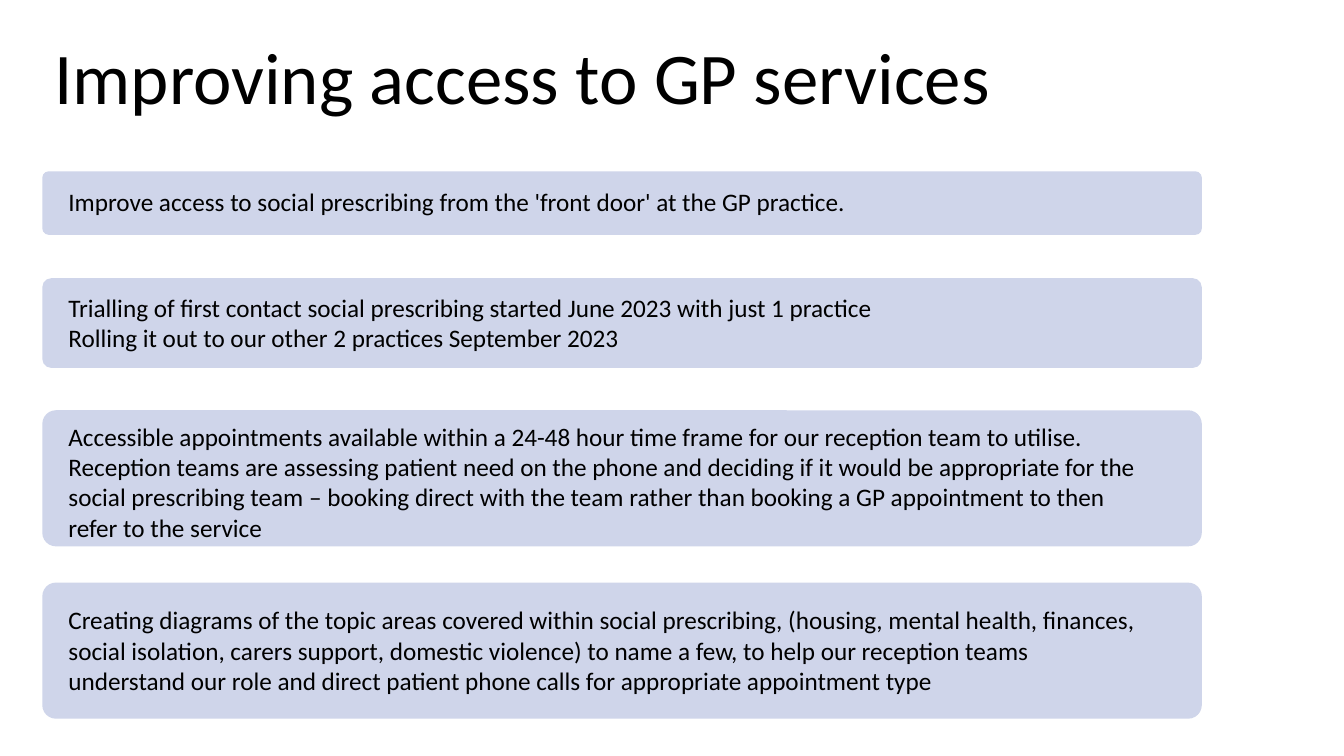
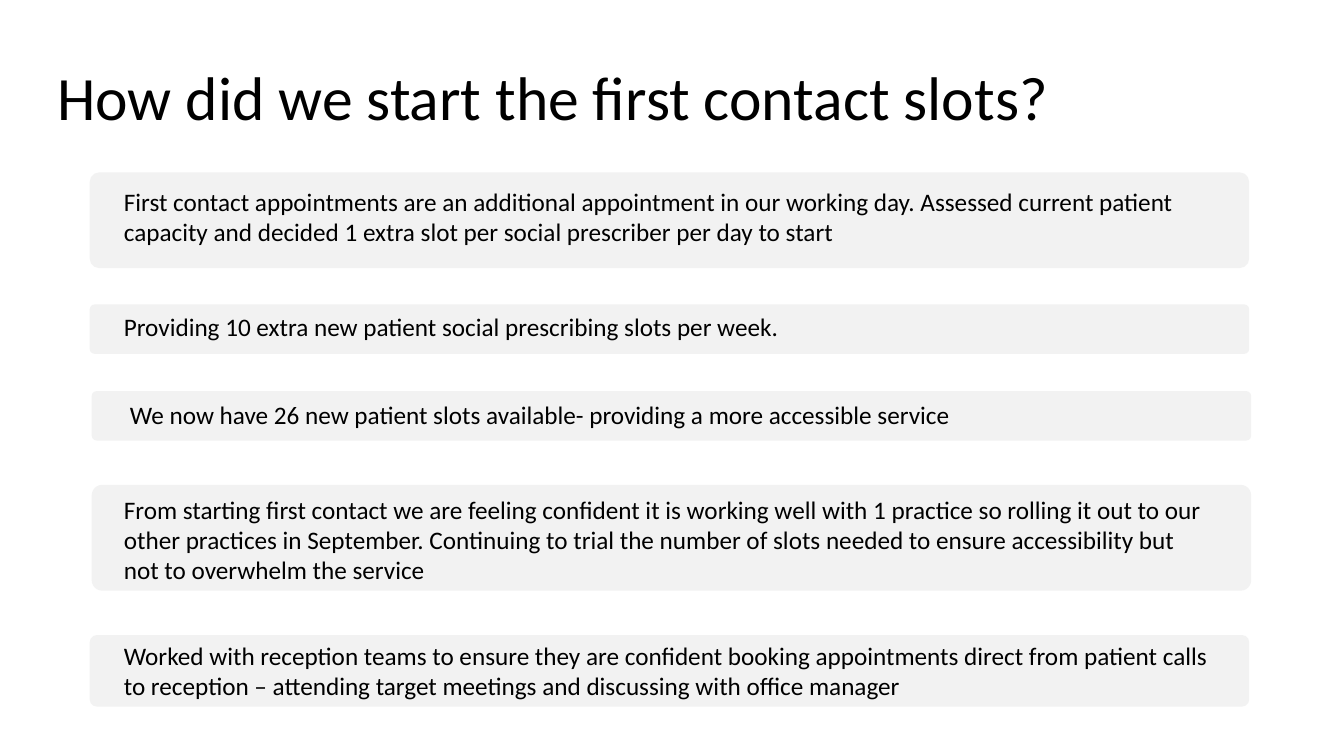
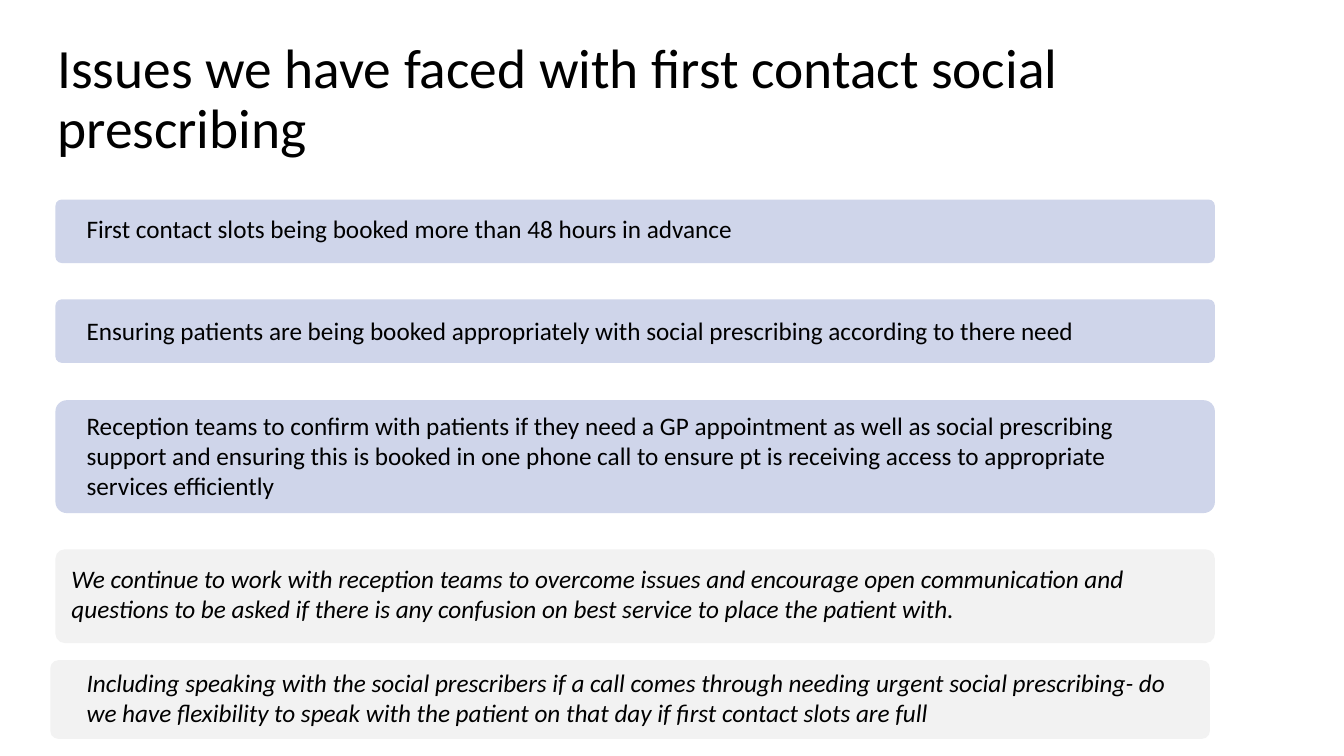
from pptx import Presentation
from pptx.dml.color import RGBColor
from pptx.enum.shapes import MSO_SHAPE as SHAPE
from pptx.enum.text import MSO_ANCHOR as ANCHOR, MSO_AUTO_SIZE as AUTO, PP_ALIGN as ALIGN
from pptx.util import Emu, Pt

# Shared style
PX = 9144  # 100 px to the inch
FONT = "Calibri"
BLACK = RGBColor(0x00, 0x00, 0x00)
BLUE = RGBColor(0xCF, 0xD5, 0xEA)
GREY = RGBColor(0xF2, 0xF2, 0xF2)
CARD_W = 1150
TITLE_BOX = (47, 41, 1120, 118)


def px(*lengths):
    return [Emu(n * PX) for n in lengths]


def add_text(s, box, paragraphs, size, italic=False):
    tf = s.shapes.add_textbox(*px(*box)).text_frame
    tf.word_wrap = True
    for i, text in enumerate(paragraphs):
        p = tf.paragraphs[0] if i == 0 else tf.add_paragraph()
        r = p.add_run()
        r.text = text
        r.font.name, r.font.size = FONT, Pt(size)
        r.font.italic = italic
        r.font.color.rgb = BLACK
    return tf


def add_title(s, text, size, box=TITLE_BOX, anchor=ANCHOR.MIDDLE, align=ALIGN.LEFT):
    tf = add_text(s, box, [text], size)
    tf.vertical_anchor = anchor
    p = tf.paragraphs[0]
    p.alignment, p.line_spacing = align, 0.9


def add_card(s, left, top, height, fill):
    sp = s.shapes.add_shape(SHAPE.ROUNDED_RECTANGLE, *px(left, top, CARD_W, height))
    sp.adjustments[0] = 0.1
    sp.shadow.inherit = False
    sp.fill.solid()
    sp.fill.fore_color.rgb = fill
    sp.line.fill.background()


def add_note(s, left, top, width, lines, paragraphs, italic=False):
    """Body text whose box is as tall as its lines."""
    box = (left, top, width, 10 + 30 * lines)
    add_text(s, box, paragraphs, 18, italic).auto_size = AUTO.SHAPE_TO_FIT_TEXT


def access_slide(s):
    add_title(s, "Improving access to GP services", 52, (18, 25, 1000, 99),
              ANCHOR.BOTTOM, ALIGN.CENTER)
    # card top, card height, text top, lines, paragraphs
    cards = [
        (170, 63, 180, 1, [
            "Improve access to social prescribing from the 'front door' at the GP practice."]),
        (276, 89, 285, 2, [
            "Trialling of first contact social prescribing started June 2023 with just 1 practice",
            "Rolling it out to our other 2 practices September 2023"]),
        (407, 135, 413, 4, [
            "Accessible appointments available within a 24-48 hour time frame for our reception "
            "team to utilise. Reception teams are assessing patient need on the phone and deciding "
            "if it would be appropriate for the social prescribing team – booking direct with the "
            "team rather than booking a GP appointment to then refer to the service"]),
        (578, 135, 595, 3, [
            "Creating diagrams of the topic areas covered within social prescribing, (housing, "
            "mental health, finances, social isolation, carers support, domestic violence) to name "
            "a few, to help our reception teams understand our role and direct patient phone calls "
            "for appropriate appointment type"]),
    ]
    for top, height, text_top, lines, paragraphs in cards:
        add_card(s, 42, top, height, BLUE)
        add_note(s, 58, text_top, 1091, lines, paragraphs)


def start_slide(s):
    add_title(s, "How did we start the first contact slots?", 44)
    # card left, card top, card height, text left, text top, lines, text
    cards = [
        (89, 171, 95, 113, 180, 2,
         "First contact appointments are an additional appointment in our working day. Assessed "
         "current patient capacity and decided 1 extra slot per social prescriber per day to start"),
        (89, 302, 49, 113, 304, 1,
         "Providing 10 extra new patient social prescribing slots per week."),
        (91, 388, 49, 119, 391, 1,
         "We now have 26 new patient slots available- providing a more accessible service"),
        (91, 481, 105, 113, 485, 3,
         "From starting first contact we are feeling confident it is working well with 1 practice "
         "so rolling it out to our other practices in September. Continuing to trial the number of "
         "slots needed to ensure accessibility but not to overwhelm the service"),
        (89, 630, 71, 113, 630, 2,
         "Worked with reception teams to ensure they are confident booking appointments direct "
         "from patient calls to reception – attending target meetings and discussing with office "
         "manager"),
    ]
    for left, top, height, text_left, text_top, lines, text in cards:
        add_card(s, left, top, height, GREY)
        add_note(s, text_left, text_top, 1102, lines, [text])


def issues_slide(s):
    add_title(s, "Issues we have faced with first contact social prescribing", 39.6)
    # fill, card left, card top, card height, text left, text top, lines, text
    cards = [
        (BLUE, 55, 198, 63, 76, 207, 1,
         "First contact slots being booked more than 48 hours in advance"),
        (BLUE, 55, 297, 63, 76, 308, 1,
         "Ensuring patients are being booked appropriately with social prescribing according to "
         "there need"),
        (BLUE, 55, 397, 112, 76, 402, 3,
         "Reception teams to confirm with patients if they need a GP appointment as well as social "
         "prescribing support and ensuring this is booked in one phone call to ensure pt is "
         "receiving access to appropriate services efficiently"),
        (GREY, 55, 545, 93, 61, 554, 2,
         "We continue to work with reception teams to overcome issues and encourage open "
         "communication and questions to be asked if there is any confusion on best service to "
         "place the patient with."),
        (GREY, 50, 655, 78, 76, 657, 2,
         "Including speaking with the social prescribers if a call comes through needing urgent "
         "social prescribing- do we have flexibility to speak with the patient on that day if "
         "first contact slots are full"),
    ]
    for fill, left, top, height, text_left, text_top, lines, text in cards:
        add_card(s, left, top, height, fill)
        # Grey cards hold the responses, set in italics
        add_note(s, text_left, text_top, 1091, lines, [text], italic=fill == GREY)


def main():
    prs = Presentation()
    prs.slide_width, prs.slide_height = px(1333, 750)
    blank = prs.slide_layouts[6]
    for build in (access_slide, start_slide, issues_slide):
        build(prs.slides.add_slide(blank))
    prs.save("out.pptx")


if __name__ == "__main__":
    main()
